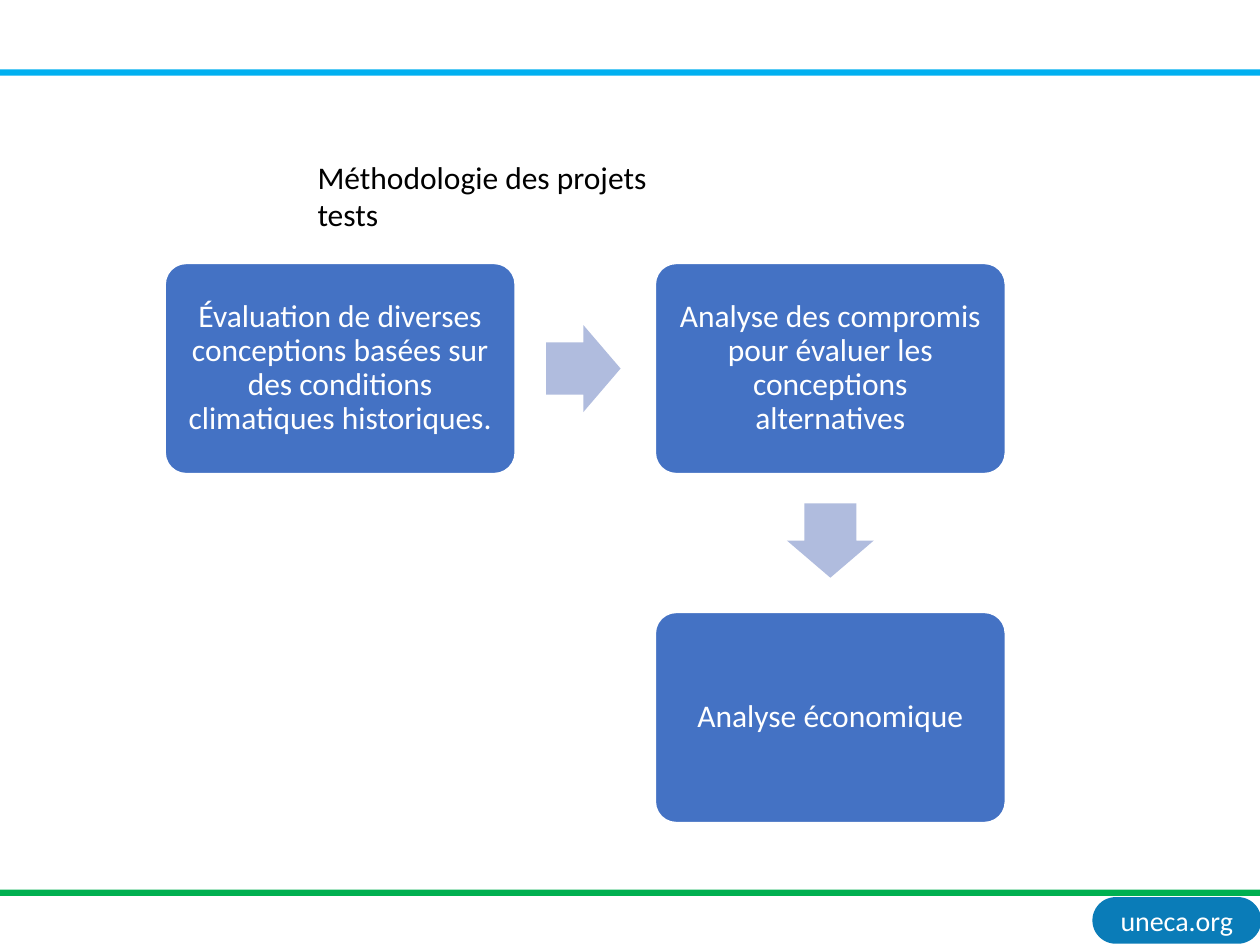
from pptx import Presentation
from pptx.dml.color import RGBColor
from pptx.enum.shapes import MSO_SHAPE as Shape
from pptx.enum.text import MSO_ANCHOR as Anchor, MSO_AUTO_SIZE as AutoSize, PP_ALIGN as Align
from pptx.util import Inches, Pt

FONT = "Calibri"
WHITE, BLACK = "FFFFFF", "000000"
SKY, GREEN, BADGE = "00B0F0", "00B050", "0A7CB8"
STEP, ARROW = "4472C4", "B0BCDE"

STEP_WIDTH, STEP_HEIGHT = 2.78, 1.67
ARROW_LENGTH, ARROW_BREADTH = 0.59, 0.69
COLUMNS = (1.31, 5.2)
ROWS = (2.09, 4.86)


def color(hex_code):
    return RGBColor.from_string(hex_code)


class FlowPage:
    def __init__(self, deck):
        self.page = deck.slides.add_slide(deck.slide_layouts[5])

    def label(self, box, text, size, ink, align=Align.CENTER, anchor=Anchor.MIDDLE,
              margins=(0.05, 0.05), spacing=1.0):
        """Fill a shape with one paragraph; margins are (horizontal, vertical)."""
        frame = box.text_frame
        frame.auto_size = AutoSize.NONE
        frame.word_wrap = True
        frame.vertical_anchor = anchor
        frame.margin_left = frame.margin_right = Inches(margins[0])
        frame.margin_top = frame.margin_bottom = Inches(margins[1])
        para = frame.paragraphs[0]
        para.alignment = align
        para.line_spacing = spacing
        span = para.add_run()
        span.text = text
        span.font.name = FONT
        span.font.size = Pt(size)
        span.font.color.rgb = color(ink)

    def title(self, text, left, top, width, height):
        box = self.page.shapes.title
        box.left, box.top = Inches(left), Inches(top)
        box.width, box.height = Inches(width), Inches(height)
        self.label(box, text, 18, BLACK, Align.LEFT, Anchor.TOP, (0.1, 0.05))

    def shape(self, kind, left, top, width, height, fill, adjustments=()):
        box = self.page.shapes.add_shape(
            kind, Inches(left), Inches(top), Inches(width), Inches(height))
        box.shadow.inherit = False
        box.fill.solid()
        box.fill.fore_color.rgb = color(fill)
        box.line.fill.background()
        for index, value in enumerate(adjustments):
            box.adjustments[index] = value
        return box

    def band(self, top, fill):
        self.shape(Shape.RECTANGLE, 0, top, 10, 0.05, fill)

    def badge(self, text):
        box = self.shape(Shape.ROUNDED_RECTANGLE, 8.67, 7.12, 1.34, 0.37, BADGE, [0.5])
        self.label(box, text, 16, WHITE)

    def step(self, text, column, row):
        box = self.shape(Shape.ROUNDED_RECTANGLE, COLUMNS[column], ROWS[row],
                         STEP_WIDTH, STEP_HEIGHT, STEP, [0.1])
        box.line.color.rgb = color(WHITE)
        box.line.width = Pt(1)
        self.label(box, text, 18, WHITE, margins=(0.12, 0.12), spacing=0.9)

    def arrow(self, center_x, center_y, rotation=0):
        box = self.shape(Shape.RIGHT_ARROW, center_x - ARROW_LENGTH / 2,
                         center_y - ARROW_BREADTH / 2, ARROW_LENGTH, ARROW_BREADTH,
                         ARROW, [0.6, 0.5])
        box.rotation = rotation


def main():
    deck = Presentation()
    deck.slide_width, deck.slide_height = Inches(10), Inches(7.5)
    flow = FlowPage(deck)

    flow.badge("uneca.org")
    flow.band(0.55, SKY)
    flow.band(7.06, GREEN)
    flow.title("Méthodologie des projets tests", 2.42, 1.2, 2.93, 0.7)

    flow.step("Évaluation de diverses conceptions basées sur des conditions "
              "climatiques historiques.", 0, 0)
    flow.arrow(4.63, ROWS[0] + STEP_HEIGHT / 2)
    flow.step("Analyse des compromis pour évaluer les conceptions alternatives", 1, 0)
    flow.arrow(COLUMNS[1] + STEP_WIDTH / 2, 4.29, rotation=90)
    flow.step("Analyse économique", 1, 1)

    deck.save("out.pptx")


if __name__ == "__main__":
    main()
